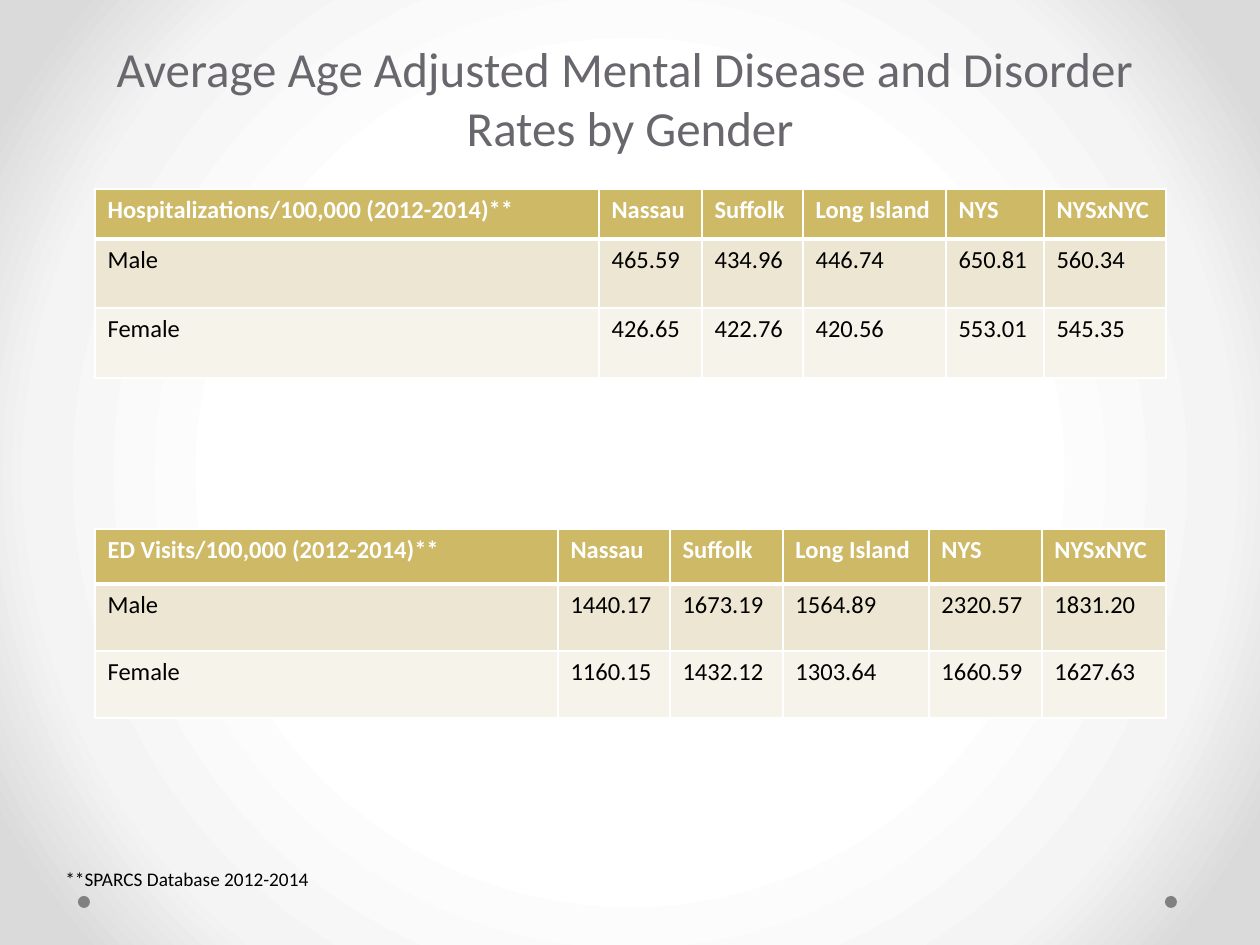
from lxml import etree
from pptx import Presentation
from pptx.dml.color import RGBColor
from pptx.enum.shapes import MSO_SHAPE
from pptx.enum.text import MSO_AUTO_SIZE, PP_ALIGN
from pptx.oxml import parse_xml
from pptx.oxml.ns import nsdecls, qn
from pptx.util import Pt

PX = 914400 / 126
OVAL = MSO_SHAPE.OVAL
LEFT, CENTER = PP_ALIGN.LEFT, PP_ALIGN.CENTER
FIT_SHAPE = MSO_AUTO_SIZE.SHAPE_TO_FIT_TEXT
FONT = "Calibri"


def emu(*lengths):
    """Turn px lengths into a list of EMU."""
    return [round(length * PX) for length in lengths]


def add_run(paragraph, text, size, color, bold=False):
    run = paragraph.add_run()
    run.text = text
    run.font.name = FONT
    run.font.size = Pt(size)
    run.font.bold = bold
    run.font.color.rgb = RGBColor.from_string(color)


prs = Presentation()
prs.slide_width, prs.slide_height = emu(1260, 945)
slide = prs.slides.add_slide(prs.slide_layouts[6])

# Radial background, white in the middle
slide.background.fill.gradient()
gradient = slide.element.find(".//" + qn("a:gradFill"))
for child in list(gradient):
    gradient.remove(child)
stops = etree.SubElement(gradient, qn("a:gsLst"))
for position, color in [(50, "FFFFFF"), (76, "F4F4F4"), (92, "DADADA")]:
    stop = etree.SubElement(stops, qn("a:gs"), pos=str(position * 1000))
    etree.SubElement(stop, qn("a:srgbClr"), val=color)
circle = etree.SubElement(gradient, qn("a:path"), path="circle")
etree.SubElement(circle, qn("a:fillToRect"), l="50000", t="50000", r="50000", b="50000")

# Corner dots
for left in (1165, 78):
    dot = slide.shapes.add_shape(OVAL, *emu(left, 896, 12, 12))
    dot.shadow.inherit = False
    dot.fill.solid()
    dot.fill.fore_color.rgb = RGBColor.from_string("808080")
    dot.line.fill.background()

# Rate tables
REGIONS = ["Nassau", "Suffolk", "Long Island", "NYS", "NYSxNYC"]
ROW_FILLS = ["CEB966", "EDE6D3", "F6F3EA"]
RATE_TABLES = [
    (189, [504, 103, 101, 143, 98, 122], [50, 69, 70], [
        ["Hospitalizations/100,000 (2012-2014)**", *REGIONS],
        ["Male", "465.59", "434.96", "446.74", "650.81", "560.34"],
        ["Female", "426.65", "422.76", "420.56", "553.01", "545.35"],
    ]),
    (529, [463, 112, 113, 146, 113, 124], [55, 67, 67], [
        ["ED Visits/100,000 (2012-2014)**", *REGIONS],
        ["Male", "1440.17", "1673.19", "1564.89", "2320.57", "1831.20"],
        ["Female", "1160.15", "1432.12", "1303.64", "1660.59", "1627.63"],
    ]),
]
for top, widths, heights, rates in RATE_TABLES:
    table = slide.shapes.add_table(
        len(heights), len(widths), *emu(95, top, sum(widths), sum(heights))
    ).table
    for column, width in zip(table.columns, emu(*widths)):
        column.width = width
    for row, height in zip(table.rows, emu(*heights)):
        row.height = height
    for r, values in enumerate(rates):
        header = r == 0
        for c, value in enumerate(values):
            cell = table.cell(r, c)
            add_run(cell.text_frame.paragraphs[0], value, 14,
                    "FFFFFF" if header else "000000", header)
            borders = {"lnL": 1, "lnR": 1, "lnT": 3 if r == 1 else 1, "lnB": 3 if header else 1}
            for side, points in borders.items():
                cell._tc.get_or_add_tcPr().append(parse_xml(
                    f'<a:{side} {nsdecls("a")} w="{Pt(points)}"><a:solidFill>'
                    f'<a:srgbClr val="FFFFFF"/></a:solidFill></a:{side}>'
                ))
            cell.fill.solid()
            cell.fill.fore_color.rgb = RGBColor.from_string(ROW_FILLS[r])

# Source note and title
TEXTS = [
    ((53, 861, 272, 37), 11, "000000", LEFT, ["**SPARCS Database 2012-2014"]),
    ((98, 32, 1064, 131), 28, "69676D", CENTER,
     ["Average Age Adjusted Mental Disease and Disorder ", "Rates by Gender"]),
]
for box, size, color, align, lines in TEXTS:
    frame = slide.shapes.add_textbox(*emu(*box)).text_frame
    frame.word_wrap = False
    frame.auto_size = FIT_SHAPE
    for i, line in enumerate(lines):
        paragraph = frame.add_paragraph() if i else frame.paragraphs[0]
        paragraph.alignment = align
        add_run(paragraph, line, size, color)

prs.save("out.pptx")
